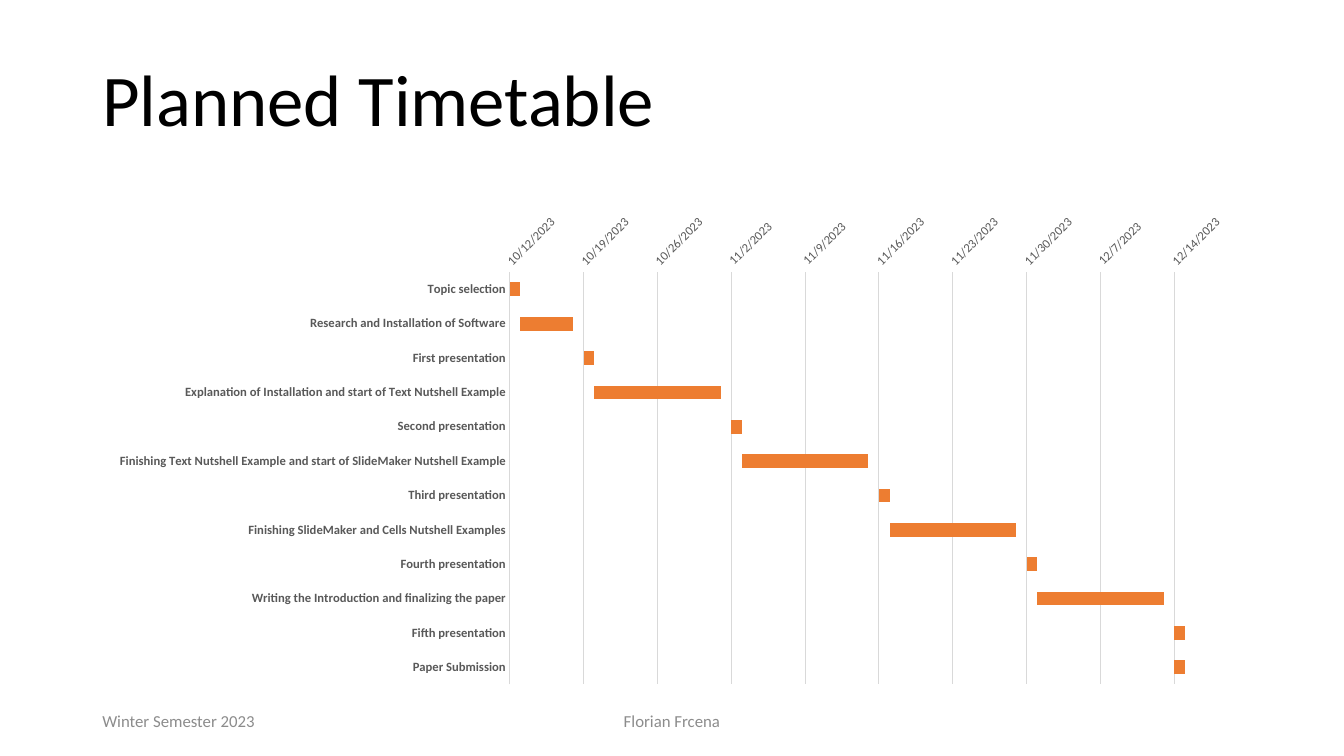
from dataclasses import dataclass

from lxml import etree
from pptx import Presentation
from pptx.chart.axis import CategoryAxis, ValueAxis
from pptx.chart.chart import Chart
from pptx.chart.data import CategoryChartData
from pptx.dml.color import RGBColor
from pptx.enum.chart import XL_CHART_TYPE, XL_TICK_MARK
from pptx.enum.text import MSO_ANCHOR, PP_ALIGN
from pptx.oxml import parse_xml
from pptx.oxml.ns import nsdecls, qn
from pptx.slide import Slide
from pptx.text.text import Font
from pptx.util import Pt

STACKED = XL_CHART_TYPE.BAR_STACKED
NO_TICK = XL_TICK_MARK.NONE
MIDDLE = MSO_ANCHOR.MIDDLE
LEFT = PP_ALIGN.LEFT
CENTER = PP_ALIGN.CENTER

FACE = "Calibri"
COLORS = {
    "title": "000000",
    "footer": "8C8C8C",
    "label": "595959",
    "grid": "D9D9D9",
    "bar": "ED7D31",
}
DAY_ONE = 45211  # serial number of 10/12/2023
SPAN = 67
WEEK = 7
TILT = -45 * 60000  # 60000ths of a degree
PLOT = {"x": 0.36, "y": 0.14, "w": 0.61, "h": 0.84}  # shares of the chart


@dataclass
class Label:
    text: str
    box: tuple[float, float, float, float]
    size: float
    color: str
    align: PP_ALIGN = LEFT
    after: float = 0
    spacing: float = 1


@dataclass
class Task:
    name: str
    start: int  # days after DAY_ONE
    days: int


LABELS = [
    Label("Planned Timetable", (66, 14.4, 828, 118.8), 52, "title", spacing=0.9),
    Label("Winter Semester 2023", (66, 500.4, 216, 28.8), 12, "footer", after=6),
    Label("Florian Frcena", (318, 500.4, 324, 28.8), 12, "footer", CENTER, 6),
]
TASKS = [
    Task("Topic selection", 0, 1),
    Task("Research and Installation of Software", 1, 5),
    Task("First presentation", 7, 1),
    Task("Explanation of Installation and start of Text Nutshell Example", 8, 12),
    Task("Second presentation", 21, 1),
    Task("Finishing Text Nutshell Example and start of SlideMaker Nutshell Example", 22, 12),
    Task("Third presentation", 35, 1),
    Task("Finishing SlideMaker and Cells Nutshell Examples", 36, 12),
    Task("Fourth presentation", 49, 1),
    Task("Writing the Introduction and finalizing the paper", 50, 12),
    Task("Fifth presentation", 63, 1),
    Task("Paper Submission", 63, 1),
]


def paint(name: str) -> RGBColor:
    return RGBColor.from_string(COLORS[name])


def set_font(font: Font, size: float, color: str, bold: bool = False) -> None:
    font.name = FACE
    font.size = Pt(size)
    font.bold = bold
    font.color.rgb = paint(color)


def add_label(slide: Slide, label: Label) -> None:
    frame = slide.shapes.add_textbox(*map(Pt, label.box)).text_frame
    frame.word_wrap = True
    frame.vertical_anchor = MIDDLE
    line = frame.paragraphs[0]
    line.text = label.text
    line.alignment = label.align
    line.space_after = Pt(label.after)
    line.line_spacing = label.spacing
    set_font(line.font, label.size, label.color)


def style_tasks(axis: CategoryAxis) -> None:
    axis.reverse_order = True
    axis.major_tick_mark = axis.minor_tick_mark = NO_TICK
    axis.format.line.color.rgb = paint("grid")
    axis.format.line.width = Pt(0.75)
    set_font(axis.tick_labels.font, 9, "label", True)


def style_dates(axis: ValueAxis) -> None:
    axis.minimum_scale = DAY_ONE
    axis.maximum_scale = DAY_ONE + SPAN
    axis.major_unit = WEEK
    axis.major_tick_mark = axis.minor_tick_mark = NO_TICK
    axis.format.line.fill.background()
    axis.has_major_gridlines = True
    grid = axis.major_gridlines.format.line
    grid.color.rgb = paint("grid")
    grid.width = Pt(0.75)
    axis.tick_labels.number_format = "m/d/yyyy"
    axis.tick_labels.number_format_is_linked = False
    set_font(axis.tick_labels.font, 9, "label")


def fix_plot(chart: Chart) -> None:
    """Tilt the date labels and pin the inner plot area."""
    body = chart.element.xpath(".//c:valAx/c:txPr/a:bodyPr")[0]
    body.set("rot", str(TILT))
    body.set("vert", "horz")
    area = chart.element.xpath(".//c:plotArea")[0]
    for old in area.findall(qn("c:layout")):
        area.remove(old)
    layout = parse_xml(f"<c:layout {nsdecls('c')}/>")
    manual = etree.SubElement(layout, qn("c:manualLayout"))
    parts = {"layoutTarget": "inner", "xMode": "edge", "yMode": "edge", **PLOT}
    for tag, value in parts.items():
        etree.SubElement(manual, qn(f"c:{tag}")).set("val", str(value))
    area.insert(0, layout)


def add_gantt(slide: Slide, tasks: list[Task]) -> None:
    data = CategoryChartData()
    data.categories = [task.name for task in tasks]
    data.add_series("Series 1", [DAY_ONE + task.start for task in tasks])
    data.add_series("Series 2", [task.days for task in tasks])
    box = map(Pt, (66, 145.4, 828, 350.6))
    chart = slide.shapes.add_chart(STACKED, *box, data).chart
    chart.has_legend = False
    chart.has_title = False
    set_font(chart.font, 10, "title")
    plot = chart.plots[0]
    plot.gap_width = 150
    plot.overlap = 100
    plot.vary_by_categories = False
    starts, spans = plot.series
    starts.format.fill.background()
    starts.format.line.fill.background()
    spans.format.fill.solid()
    spans.format.fill.fore_color.rgb = paint("bar")
    style_tasks(chart.category_axis)
    style_dates(chart.value_axis)
    fix_plot(chart)


def main() -> None:
    deck = Presentation()
    deck.slide_width, deck.slide_height = Pt(960), Pt(540)
    slide = deck.slides.add_slide(deck.slide_layouts[6])
    for label in LABELS:
        add_label(slide, label)
    add_gantt(slide, TASKS)
    deck.save("out.pptx")


if __name__ == "__main__":
    main()
